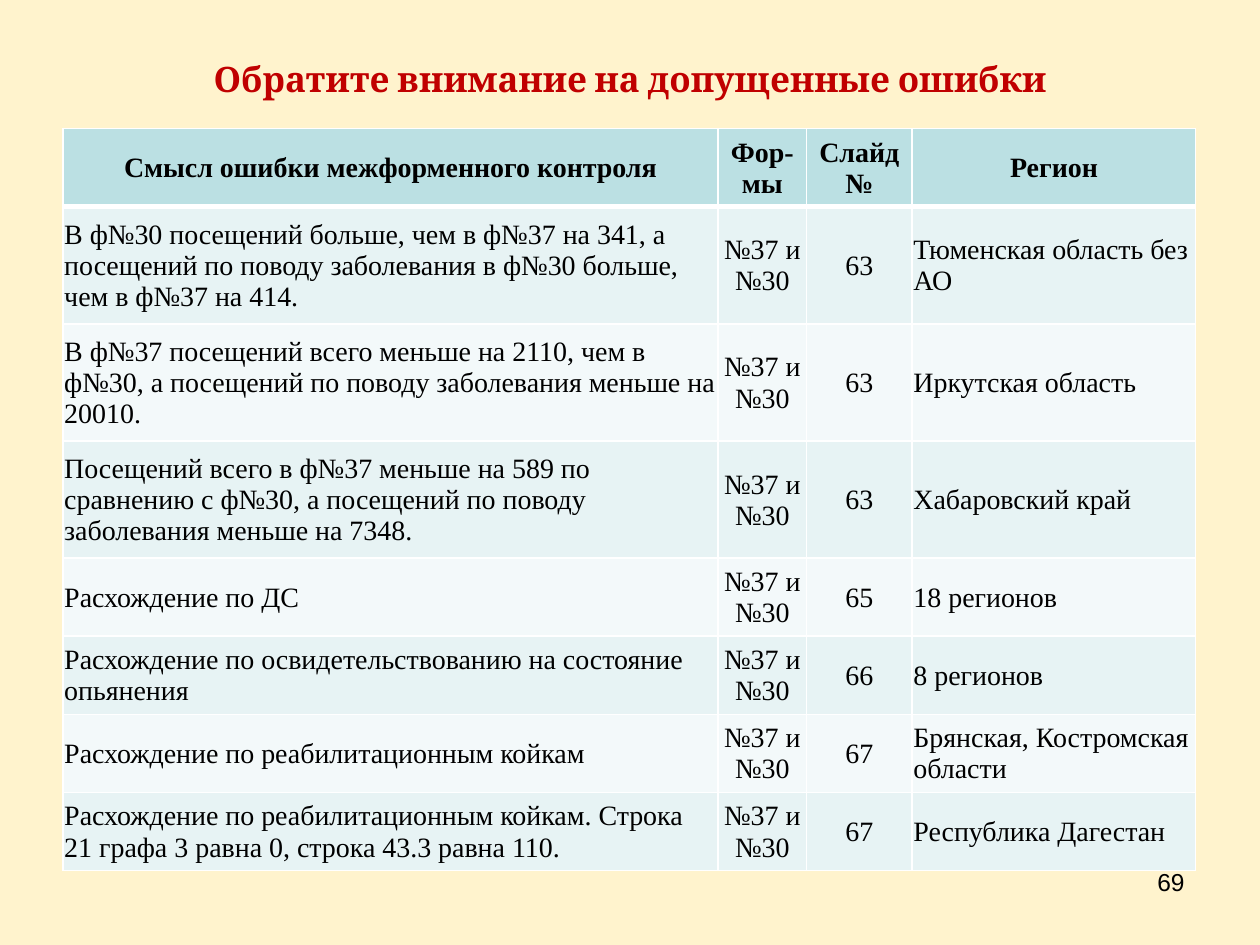
from lxml import etree
from pptx import Presentation
from pptx.dml.color import RGBColor
from pptx.enum import text
from pptx.oxml import ns
from pptx.util import Inches, Pt

CREAM = RGBColor(0xFF, 0xF3, 0xCD)
RED = RGBColor(0xC0, 0x00, 0x00)
BLACK = RGBColor(0x00, 0x00, 0x00)
HEADER_FILL = RGBColor(0xBB, 0xE0, 0xE3)
BAND_FILLS = [RGBColor(0xE7, 0xF3, 0xF4), RGBColor(0xF3, 0xF9, 0xFA)]
WHITE = RGBColor(0xFF, 0xFF, 0xFF)
CENTER, LEFT, RIGHT = text.PP_ALIGN.CENTER, text.PP_ALIGN.LEFT, text.PP_ALIGN.RIGHT

# Content
TITLE = "Обратите внимание на допущенные ошибки"
PAGE_NUMBER = "69"
FORMS = "№37 и №30"
HEADER = ("Смысл ошибки межформенного контроля", "Фор-мы", "Слайд №", "Регион")
ERRORS = [  # meaning, slide number, region
    ("В ф№30 посещений больше, чем в ф№37 на 341, а посещений по поводу "
     "заболевания в ф№30 больше, чем в ф№37 на 414.", "63", "Тюменская область без АО"),
    ("В ф№37 посещений всего меньше на 2110, чем в ф№30, а посещений по поводу "
     "заболевания меньше на 20010.", "63", "Иркутская область"),
    ("Посещений всего в ф№37 меньше на 589 по сравнению с ф№30, а посещений по "
     "поводу заболевания меньше на 7348.", "63", "Хабаровский край"),
    ("Расхождение по ДС", "65", "18 регионов"),
    ("Расхождение по освидетельствованию на состояние опьянения", "66", "8 регионов"),
    ("Расхождение по реабилитационным койкам", "67", "Брянская, Костромская области"),
    ("Расхождение по реабилитационным койкам. Строка 21 графа 3 равна 0, "
     "строка 43.3 равна 110.", "67", "Республика Дагестан"),
]
ROWS = [HEADER] + [(meaning, FORMS, number, region) for meaning, number, region in ERRORS]
COLUMN_WIDTHS = [5.2, 0.7, 0.84, 2.25]
ROW_HEIGHTS = [0.62] + [0.93] * 3 + [0.62] * 4
COLUMN_ALIGNS = [LEFT, CENTER, CENTER, LEFT]


def write(frame, words, align, font_name, size, color, bold=False):
    para = frame.paragraphs[0]
    para.text = words
    para.alignment = align
    font = para.font
    font.name, font.size, font.bold = font_name, Pt(size), bold
    font.color.rgb = color


def add_text(page, area, anchor, *style):
    box = page.shapes.add_textbox(*map(Inches, area))
    box.text_frame.word_wrap = True
    box.text_frame.vertical_anchor = anchor
    write(box.text_frame, *style)


def set_borders(cell, widths):
    properties = cell._tc.get_or_add_tcPr()
    for index, (side, width) in enumerate(widths.items()):
        line = etree.Element(ns.qn(f"a:{side}"), w=str(Pt(width)))
        fill = etree.SubElement(line, ns.qn("a:solidFill"))
        etree.SubElement(fill, ns.qn("a:srgbClr"), val=str(WHITE))
        properties.insert(index, line)


deck = Presentation()
deck.slide_width, deck.slide_height = Inches(10), Inches(7.5)
page = deck.slides.add_slide(deck.slide_layouts[6])
page.background.fill.solid()
page.background.fill.fore_color.rgb = CREAM

# Title
add_text(page, (0.5, 0.3, 9, 0.64), text.MSO_ANCHOR.MIDDLE,
         TITLE, CENTER, "Cambria", 20, RED, True)

# Table of errors
table = page.shapes.add_table(len(ROWS), len(HEADER), Inches(0.5), Inches(1.02),
                              Inches(9), Inches(sum(ROW_HEIGHTS))).table
for column, width in zip(table.columns, COLUMN_WIDTHS):
    column.width = Inches(width)
for row, height in zip(table.rows, ROW_HEIGHTS):
    row.height = Inches(height)

for r, row in enumerate(ROWS):
    is_header = r == 0
    for c, words in enumerate(row):
        cell = table.cell(r, c)
        cell.vertical_anchor = text.MSO_ANCHOR.MIDDLE
        cell.margin_left = cell.margin_top = cell.margin_right = Inches(0.01)
        cell.margin_bottom = 0
        cell.fill.solid()
        cell.fill.fore_color.rgb = HEADER_FILL if is_header else BAND_FILLS[(r - 1) % 2]
        set_borders(cell, {"lnL": 1, "lnR": 1, "lnT": 3 if r == 1 else 1,
                           "lnB": 3 if is_header else 1})
        write(cell.text_frame, words, CENTER if is_header else COLUMN_ALIGNS[c],
              "Times New Roman", 16, BLACK, is_header)

# Page number
add_text(page, (7.17, 6.83, 2.33, 0.52), text.MSO_ANCHOR.TOP,
         PAGE_NUMBER, RIGHT, "Arial", 14, BLACK)

deck.save("out.pptx")
